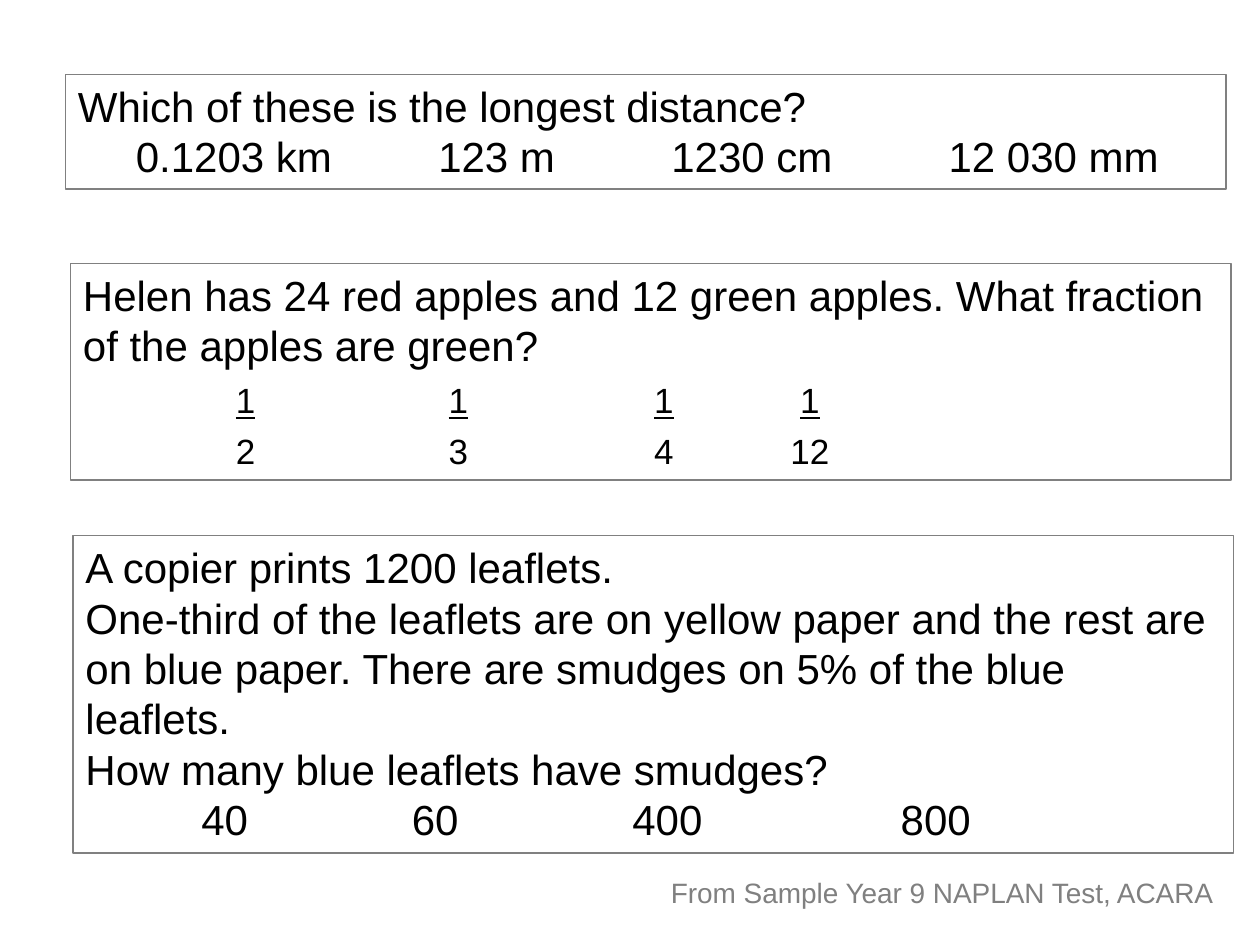
from dataclasses import dataclass

from lxml import etree
from pptx import Presentation
from pptx import util as u
from pptx.dml.color import RGBColor
from pptx.enum import shapes, text
from pptx.oxml.ns import qn


@dataclass(frozen=True)
class Theme:
    font: str = "Arial"
    ink: RGBColor = RGBColor(0x00, 0x00, 0x00)
    grey: RGBColor = RGBColor(0x80, 0x80, 0x80)
    question: int = 24
    fraction: int = 20
    credit: int = 16
    leading: float = 1.2
    border: float = 0.75


THEME = Theme()
QUESTION_WIDTH = 9.21


def prepare_frame(shape):
    """Top-anchored, wrapping text that sets the height of its shape."""
    frame = shape.text_frame
    frame.word_wrap = True
    frame.vertical_anchor = text.MSO_ANCHOR.TOP
    frame.auto_size = text.MSO_AUTO_SIZE.SHAPE_TO_FIT_TEXT
    return frame


def add_line(frame, align=text.PP_ALIGN.LEFT, line_size=THEME.question):
    """Start a line; the first one uses the paragraph already there."""
    first = frame.paragraphs[0]
    line = frame.add_paragraph() if first.runs else first
    line.alignment = align
    line.line_spacing = u.Pt(line_size * THEME.leading)
    return line


def add_run(line, words, size=THEME.question, color=THEME.ink, underline=False):
    run = line.add_run()
    run.text = words
    run.font.name = THEME.font
    run.font.size = u.Pt(size)
    run.font.color.rgb = color
    run.font.underline = underline


def add_choices(frame, choices, stops, align="l", **style):
    """One row of answers, each at its own tab stop."""
    line = add_line(frame)
    tabs = etree.SubElement(line._p.get_or_add_pPr(), qn("a:tabLst"))
    for stop in stops:
        etree.SubElement(tabs, qn("a:tab"), pos=str(u.Inches(stop)), algn=align)
    for choice in choices:
        add_run(line, "\t", style.get("size", THEME.question))
        add_run(line, choice, **style)


def add_question(slide, left, top, height, lines):
    """Outlined box holding the wording of one question."""
    box = slide.shapes.add_shape(
        shapes.MSO_SHAPE.RECTANGLE, u.Inches(left), u.Inches(top),
        u.Inches(QUESTION_WIDTH), u.Inches(height))
    box.shadow.inherit = False
    box.fill.background()
    box.line.color.rgb = THEME.grey
    box.line.width = u.Pt(THEME.border)
    frame = prepare_frame(box)
    for words in lines:
        add_run(add_line(frame), words)
    return frame


def add_credit(slide, words):
    credit = slide.shapes.add_textbox(
        u.Inches(3.82), u.Inches(6.9), u.Inches(5.91), u.Inches(0.37))
    line = add_line(prepare_frame(credit), text.PP_ALIGN.RIGHT, THEME.credit)
    add_run(line, words, THEME.credit, THEME.grey)


def main():
    deck = Presentation()
    deck.slide_width, deck.slide_height = u.Inches(10), u.Inches(7.5)
    slide = deck.slides.add_slide(deck.slide_layouts.get_by_name("Blank"))

    # Longest distance
    distance = add_question(slide, 0.52, 0.59, 0.91,
                            ["Which of these is the longest distance?"])
    add_choices(distance, ["0.1203 km", "123 m", "1230 cm", "12 030 mm"],
                [0.46, 2.86, 4.71, 6.91])

    # Fraction of apples: underlined numerators above their denominators
    apples = add_question(slide, 0.56, 2.09, 1.72, [
        "Helen has 24 red apples and 12 green apples. "
        "What fraction of the apples are green?"])
    denominators = ["2", "3", "4", "12"]
    for parts, underline in ((["1"] * len(denominators), True),
                             (denominators, False)):
        add_choices(apples, parts, [1.29, 2.98, 4.61, 5.77], "ctr",
                    size=THEME.fraction, underline=underline)

    # Smudged leaflets
    leaflets = add_question(slide, 0.58, 4.25, 2.52, [
        "A copier prints 1200 leaflets.",
        "One-third of the leaflets are on yellow paper and the rest are on "
        "blue paper. There are smudges on 5% of the blue leaflets.",
        "How many blue leaflets have smudges?"])
    add_choices(leaflets, ["40", "60", "400", "800"], [0.92, 2.59, 4.34, 6.47])

    add_credit(slide, "From Sample Year 9 NAPLAN Test, ACARA")
    deck.save("out.pptx")


if __name__ == "__main__":
    main()
